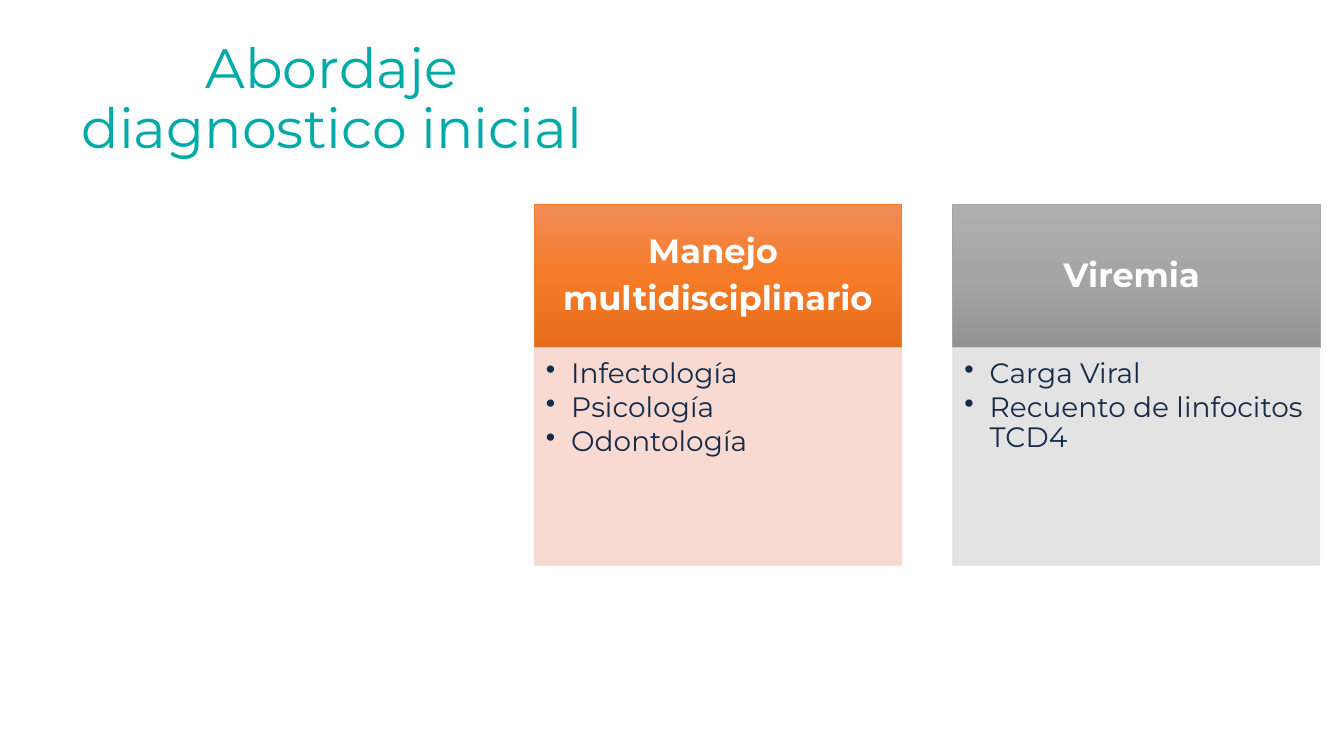
from copy import deepcopy

from lxml import etree
from pptx import Presentation
from pptx.dml.color import RGBColor
from pptx.enum import shapes, text
from pptx.oxml import ns
from pptx.util import Pt

FONT = "Montserrat"
COLORS = {
    "title": "00AAA7",
    "header_text": "FFFFFF",
    "body_text": "152B48",
}
COLUMNS = [
    {
        "header": ["Manejo ", "multidisciplinario"],
        "items": ["Infectología", "Psicología", "Odontología"],
        "gradient": ["F18C57", "F67B28", "E56C19"],
        "border": "ED7D31",
        "panel": "F8D7CE",
    },
    {
        "header": ["Viremia "],
        "items": ["Carga Viral", "Recuento de linfocitos TCD4"],
        "gradient": ["AFAFAF", "A5A5A5", "939393"],
        "border": "A5A5A5",
        "panel": "E1E1E1",
    },
]
LEFT, TOP, WIDTH, STEP = 381.6, 146.2, 262.3, 298.9
HEADER_HEIGHT, PANEL_HEIGHT = 102.2, 155.5

TITLE = {
    "frame": {"vertical_anchor": text.MSO_ANCHOR.MIDDLE},
    "paragraph": {"alignment": text.PP_ALIGN.CENTER, "line_spacing": 0.9},
    "font": {"size": Pt(39.6), "bold": False},
    "color": "title",
}
HEADER = {
    "frame": {
        "vertical_anchor": text.MSO_ANCHOR.MIDDLE,
        "margin_left": Pt(13.4), "margin_right": Pt(13.4),
        "margin_top": Pt(7.7), "margin_bottom": Pt(7.7),
    },
    "paragraph": {
        "alignment": text.PP_ALIGN.CENTER, "line_spacing": 0.9,
        "space_after": Pt(8),
    },
    "font": {"size": Pt(24), "bold": True},
    "color": "header_text",
}
BODY = {
    "frame": {
        "vertical_anchor": text.MSO_ANCHOR.TOP,
        "margin_left": Pt(8.4), "margin_right": Pt(11.2),
        "margin_top": Pt(8.4), "margin_bottom": Pt(12.6),
    },
    "paragraph": {
        "alignment": text.PP_ALIGN.LEFT, "line_spacing": 0.9,
        "space_after": Pt(2.7),
    },
    "font": {"size": Pt(20), "bold": False},
    "color": "body_text",
    "bullet": True,
}


def set_all(target, values):
    for name, value in values.items():
        setattr(target, name, value)


def add_bullet(p):
    props = p._p.get_or_add_pPr()
    props.set("marL", str(Pt(18)))
    props.set("indent", str(-Pt(18)))
    etree.SubElement(props, ns.qn("a:buChar"), char="•")


def write_text(sp, lines, style):
    tf = sp.text_frame
    tf.word_wrap = True
    set_all(tf, style["frame"])
    for i, line in enumerate(lines):
        p = tf.add_paragraph() if i else tf.paragraphs[0]
        if style.get("bullet"):
            add_bullet(p)
        set_all(p, style["paragraph"])
        r = p.add_run()
        r.text = line
        set_all(r.font, {"name": FONT, **style["font"]})
        r.font.color.rgb = RGBColor.from_string(COLORS[style["color"]])


def add_title(s, line):
    sp = s.shapes.add_textbox(Pt(48), Pt(19.4), Pt(378), Pt(104.4))
    write_text(sp, [line], TITLE)


def add_box(s, left, top, height, border):
    sp = s.shapes.add_shape(
        shapes.MSO_SHAPE.RECTANGLE, Pt(left), Pt(top), Pt(WIDTH), Pt(height))
    sp.shadow.inherit = False
    sp.line.width = Pt(0.5)
    sp.line.color.rgb = RGBColor.from_string(border)
    return sp


def add_header(s, left, column):
    sp = add_box(s, left, TOP, HEADER_HEIGHT, column["border"])
    sp.fill.gradient()
    sp.fill.gradient_angle = 270
    stops = next(sp._element.spPr.iter(ns.qn("a:gsLst")))
    stops.insert(1, deepcopy(stops[0]))
    for i, stop in enumerate(sp.fill.gradient_stops):
        stop.position = i / 2
        stop.color.rgb = RGBColor.from_string(column["gradient"][i])
    write_text(sp, column["header"], HEADER)


def add_panel(s, left, column):
    sp = add_box(s, left, TOP + HEADER_HEIGHT, PANEL_HEIGHT, column["panel"])
    sp.fill.solid()
    sp.fill.fore_color.rgb = RGBColor.from_string(column["panel"])
    for color in sp._element.spPr.iter(ns.qn("a:srgbClr")):
        etree.SubElement(color, ns.qn("a:alpha"), val="90000")
    write_text(sp, column["items"], BODY)


def main():
    prs = Presentation()
    prs.slide_width, prs.slide_height = Pt(960), Pt(540)
    s = prs.slides.add_slide(prs.slide_layouts[6])
    add_title(s, "Abordaje diagnostico inicial")
    for i, column in enumerate(COLUMNS):
        left = LEFT + i * STEP
        add_header(s, left, column)
        add_panel(s, left, column)
    prs.save("out.pptx")


if __name__ == "__main__":
    main()
